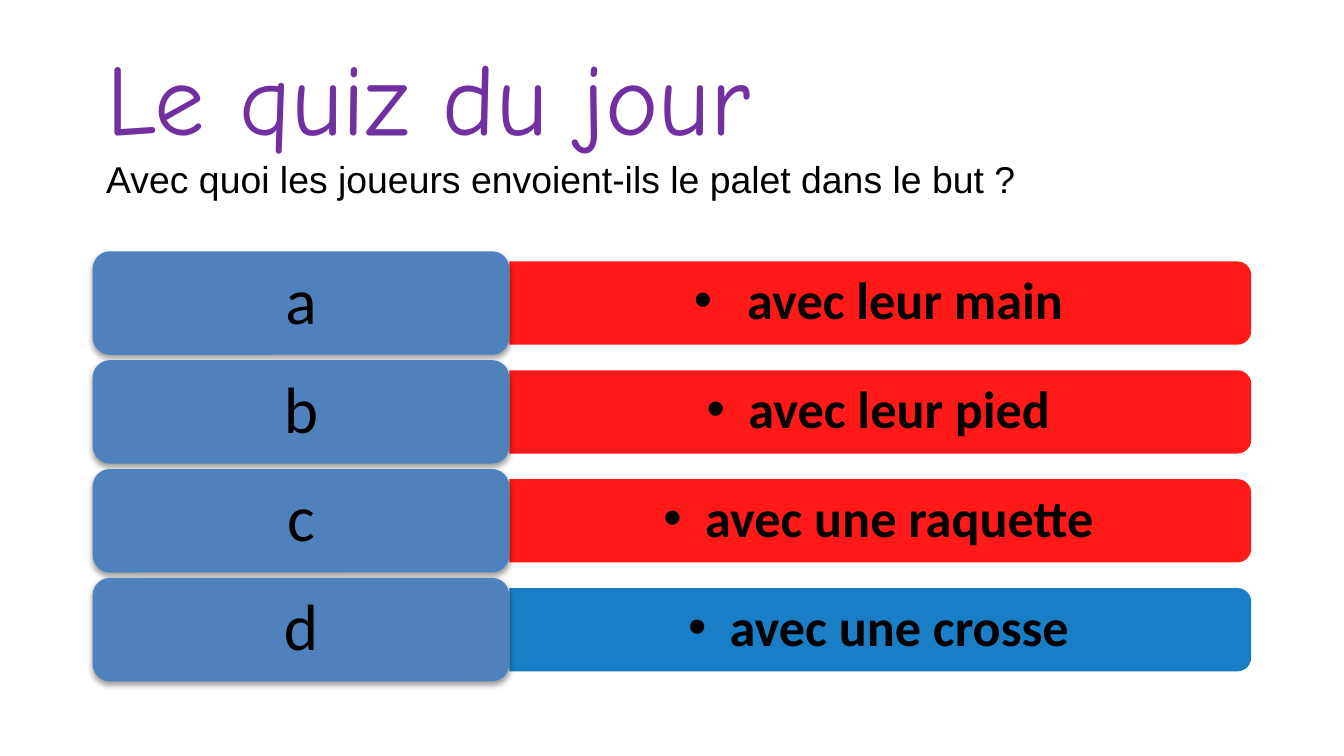
from lxml import etree
from pptx import Presentation
from pptx import util as u
from pptx.dml.color import RGBColor
from pptx.enum import shapes, text
from pptx.oxml.ns import qn

# Content
TITLE = "Le quiz du jour"
QUESTION = "Avec quoi les joueurs envoient-ils le palet dans le but ?"
ANSWERS = [
    ("a", " avec leur main", "wrong"),
    ("b", "avec leur pied", "wrong"),
    ("c", "avec une raquette", "wrong"),
    ("d", "avec une crosse", "right"),
]
COLOURS = {
    "title": "7030A0",
    "text": "000000",
    "letter": "4F81BD",
    "wrong": "FF0000",
    "right": "0070C0",
}

# Layout in inches, on a 16:9 page
PAGE_WIDTH = 10
PAGE_HEIGHT = PAGE_WIDTH * 9 / 16
LEFT, LETTER_WIDTH, LETTER_HEIGHT = 0.69, 3.1, 0.77
FIRST_TOP, ROW_STEP = 1.87, 0.81
BAR_WIDTH, BAR_HEIGHT = 5.52, 0.62
TEXT_WIDTH, TEXT_HEIGHT = 5.49, 0.56


def style(span, size, font, colour="text", bold=False):
    span.font.size = u.Pt(size)
    span.font.name = font
    span.font.bold = bold
    span.font.color.rgb = RGBColor.from_string(COLOURS[colour])


def write(shape, words, size, inset_x, inset_y, bold=False):
    frame = shape.text_frame
    frame.word_wrap = True
    frame.vertical_anchor = text.MSO_ANCHOR.MIDDLE
    frame.margin_left = frame.margin_right = u.Inches(inset_x)
    frame.margin_top = frame.margin_bottom = u.Inches(inset_y)
    para = frame.paragraphs[0]
    para.text = words
    para.alignment = text.PP_ALIGN.CENTER
    para.line_spacing = 0.9
    style(para.runs[0], size, "Calibri", bold=bold)
    return para


def add_shape(page, kind, left, top, width, height, colour):
    shape = page.shapes.add_shape(kind, *map(u.Inches, (left, top, width, height)))
    shape.fill.solid()
    shape.fill.fore_color.rgb = RGBColor.from_string(COLOURS[colour])
    shape.line.fill.background()
    shape.shadow.inherit = False
    return shape


def set_alpha(colour_element, percent):
    etree.SubElement(colour_element, qn("a:alpha"), val=str(percent * 1000))


def add_bar(page, middle, colour):
    # A bar standing upright, turned so that its rounded end points right
    centre = LEFT + LETTER_WIDTH + BAR_WIDTH / 2
    bar = add_shape(page, shapes.MSO_SHAPE.ROUND_2_SAME_RECTANGLE,
                    centre - BAR_HEIGHT / 2, middle - BAR_WIDTH / 2,
                    BAR_HEIGHT, BAR_WIDTH, colour)
    bar.rotation = 90
    set_alpha(bar.element.spPr.find(".//" + qn("a:srgbClr")), 90)


def add_answer(page, middle, words):
    box = page.shapes.add_textbox(
        u.Inches(LEFT + LETTER_WIDTH), u.Inches(middle - TEXT_HEIGHT / 2),
        u.Inches(TEXT_WIDTH), u.Inches(TEXT_HEIGHT))
    para = write(box, words, 28, 0.12, 0.06, bold=True)
    para.level = 1
    properties = para._p.get_or_add_pPr()
    properties.set("marL", str(u.Inches(0.31)))
    properties.set("indent", str(-u.Inches(0.31)))
    etree.SubElement(properties, qn("a:buFont"), typeface="Arial")
    etree.SubElement(properties, qn("a:buChar"), char="•")


def add_letter(page, top, letter):
    tile = add_shape(page, shapes.MSO_SHAPE.ROUNDED_RECTANGLE,
                     LEFT, top, LETTER_WIDTH, LETTER_HEIGHT, "letter")
    effects = tile.element.spPr.find(qn("a:effectLst"))
    shadow = etree.SubElement(
        effects, qn("a:outerShdw"), blurRad=str(u.Pt(3.1)),
        dist=str(u.Pt(1.6)), dir="5400000", rotWithShape="0")
    set_alpha(etree.SubElement(shadow, qn("a:srgbClr"), val=COLOURS["text"]), 38)
    write(tile, letter, 35, 0.19, 0.11)


def main():
    deck = Presentation()
    deck.slide_width, deck.slide_height = u.Inches(PAGE_WIDTH), u.Inches(PAGE_HEIGHT)
    page = deck.slides.add_slide(deck.slide_layouts[5])

    # Title and question, split by a line break
    title = page.shapes.title
    title.left, title.top = u.Inches(LEFT), u.Inches(0.2)
    title.width, title.height = u.Inches(8.62), u.Inches(1.35)
    title.text_frame.word_wrap = True
    title.text_frame.vertical_anchor = text.MSO_ANCHOR.MIDDLE
    para = title.text_frame.paragraphs[0]
    para.text = TITLE + "\v" + QUESTION
    para.alignment = text.PP_ALIGN.LEFT
    style(para.runs[0], 54, "Comic Neue", "title")
    style(para.runs[1], 20, "Arial")

    # One row per answer
    for row, (letter, words, verdict) in enumerate(ANSWERS):
        top = FIRST_TOP + row * ROW_STEP
        middle = top + LETTER_HEIGHT / 2
        add_bar(page, middle, verdict)
        add_answer(page, middle, words)
        add_letter(page, top, letter)

    deck.save("out.pptx")


if __name__ == "__main__":
    main()
